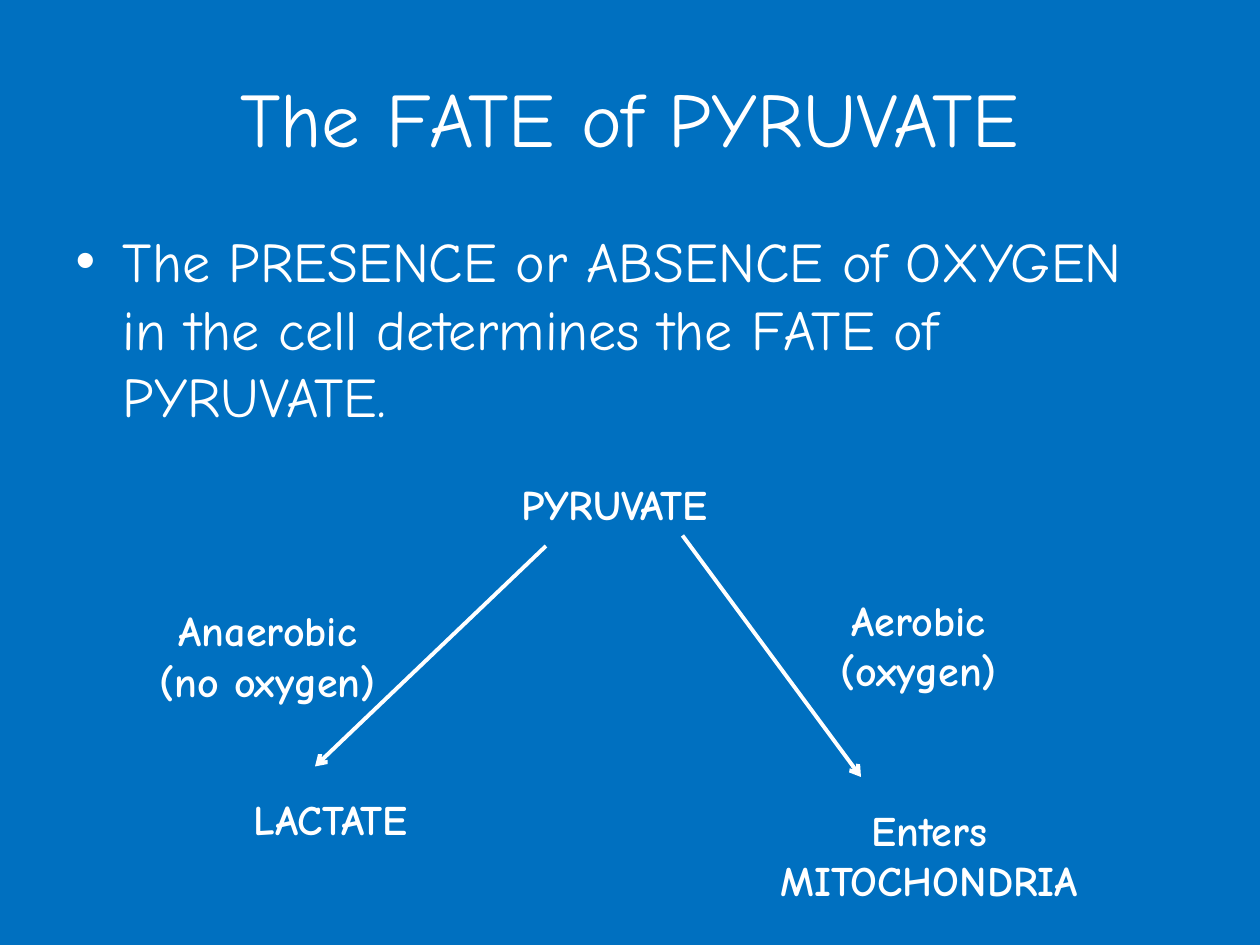
from dataclasses import dataclass

from lxml import etree
from pptx import Presentation
from pptx.dml.color import RGBColor
from pptx.enum.shapes import MSO_CONNECTOR
from pptx.enum.text import MSO_ANCHOR, MSO_AUTO_SIZE, PP_ALIGN
from pptx.oxml.ns import qn
from pptx.util import Pt

STRAIGHT = MSO_CONNECTOR.STRAIGHT
CENTER = PP_ALIGN.CENTER
LEFT = PP_ALIGN.LEFT
MIDDLE = MSO_ANCHOR.MIDDLE
TOP = MSO_ANCHOR.TOP
GROW = MSO_AUTO_SIZE.SHAPE_TO_FIT_TEXT


@dataclass(frozen=True)
class Theme:
    """Colours, font and sizes of the slide."""
    background: RGBColor = RGBColor(0x00, 0x70, 0xC0)
    ink: RGBColor = RGBColor(0xFF, 0xFF, 0xFF)
    font: str = "Comic Neue"
    title_size: int = 44
    body_size: int = 32
    label_size: int = 24
    line_width: float = 2.25


THEME = Theme()
LABEL_WIDTH = 222
LINE_HEIGHT = 29.5
LABEL_PADDING = 6.5


def style_paragraph(paragraph, size, alignment, bold=False):
    """Apply the theme font and alignment to a paragraph."""
    paragraph.alignment = alignment
    paragraph.font.name = THEME.font
    paragraph.font.size = Pt(size)
    paragraph.font.bold = bold
    paragraph.font.color.rgb = THEME.ink


def fill_placeholder(shape, box, text, size, alignment, anchor):
    """Move a placeholder to its box and write its text."""
    shape.left, shape.top, shape.width, shape.height = map(Pt, box)
    shape.text_frame.text = text
    shape.text_frame.vertical_anchor = anchor
    style_paragraph(shape.text_frame.paragraphs[0], size, alignment)


def add_label(slide, left, top, text, line_count):
    """Add a bold centred label of the given number of lines."""
    height = LABEL_PADDING + line_count * LINE_HEIGHT
    shape = slide.shapes.add_textbox(Pt(left), Pt(top), Pt(LABEL_WIDTH), Pt(height))
    frame = shape.text_frame
    frame.word_wrap = True
    frame.auto_size = GROW
    frame.text = text
    for paragraph in frame.paragraphs:
        style_paragraph(paragraph, THEME.label_size, CENTER, bold=True)


def add_arrow(slide, start, end):
    """Draw a straight arrow from start to end."""
    connector = slide.shapes.add_connector(STRAIGHT, *map(Pt, start + end))
    connector.line.color.rgb = THEME.ink
    connector.line.width = Pt(THEME.line_width)
    line = connector.line._get_or_add_ln()
    etree.SubElement(line, qn("a:tailEnd"), type="arrow")
    etree.SubElement(connector._element.spPr, qn("a:effectLst"))


def add_pathways(slide, left, top):
    """Draw the branching pathways relative to their top-left corner."""
    labels = [
        (198, 0, "PYRUVATE", 1),
        (0, 72, "Anaerobic\n(no oxygen)", 2),
        (372, 66, "Aerobic\n(oxygen)", 2),
        (36, 180, "LACTATE", 1),
        (378, 186, "Enters MITOCHONDRIA", 2),
    ]
    arrows = [((270, 42), (138, 168)), ((348, 36), (450, 174))]
    for x, y, text, line_count in labels:
        add_label(slide, left + x, top + y, text, line_count)
    for start, end in arrows:
        add_arrow(slide, *((left + x, top + y) for x, y in (start, end)))


def build_slide(presentation):
    """Add the slide on the fate of pyruvate."""
    slide = presentation.slides.add_slide(presentation.slide_layouts[1])
    slide.background.fill.solid()
    slide.background.fill.fore_color.rgb = THEME.background
    fill_placeholder(slide.shapes.title, (36, 21.6, 648, 90),
                     "The FATE of PYRUVATE", THEME.title_size, CENTER, MIDDLE)
    fill_placeholder(slide.placeholders[1], (36, 126, 648, 356.4),
                     "The PRESENCE or ABSENCE of OXYGEN in the cell "
                     "determines the FATE of PYRUVATE.",
                     THEME.body_size, LEFT, TOP)
    add_pathways(slide, 42, 270)


def main():
    """Build and save the presentation."""
    presentation = Presentation()
    presentation.slide_width, presentation.slide_height = Pt(720), Pt(540)
    build_slide(presentation)
    presentation.save("out.pptx")


if __name__ == "__main__":
    main()
